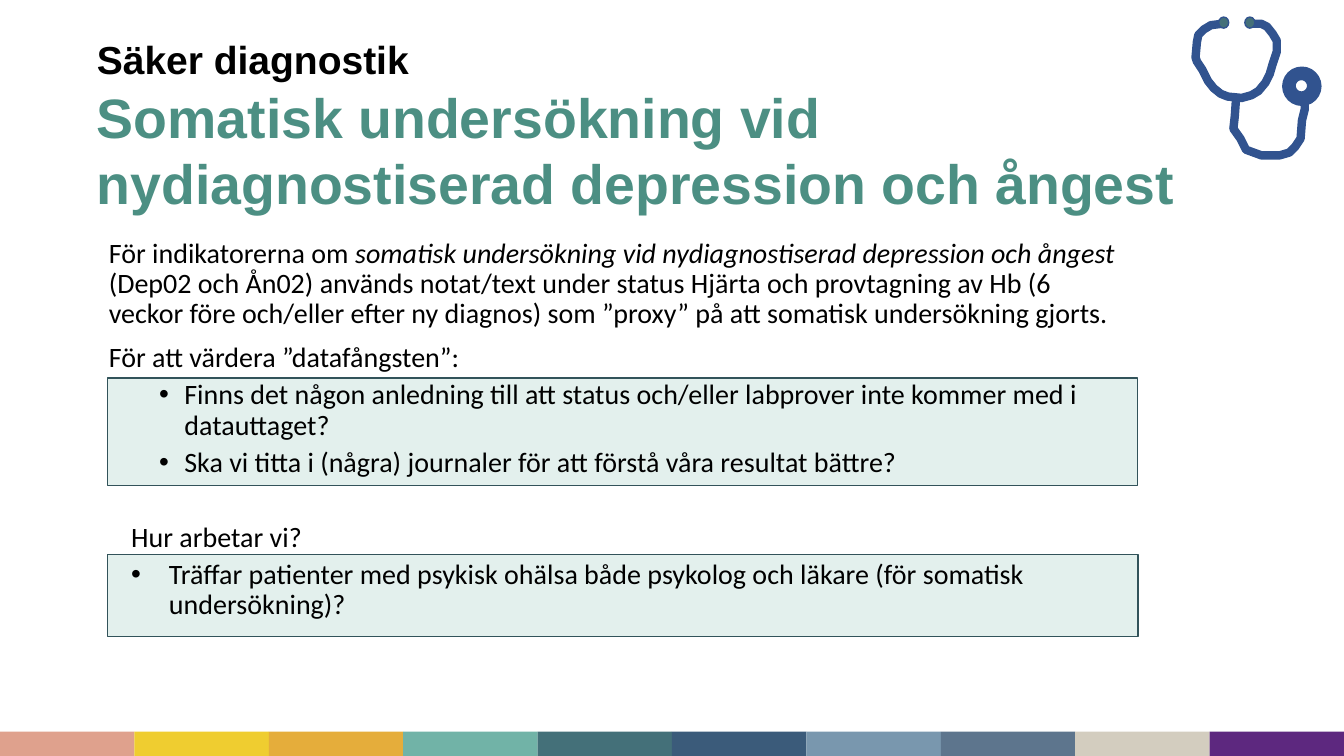
import pptx
import pptx.util
import pptx.dml.color
import pptx.enum.shapes
import pptx.enum.text
import pptx.oxml.ns
from dataclasses import dataclass
from lxml import etree

Pt = pptx.util.Pt
SHAPES = pptx.enum.shapes.MSO_SHAPE

HEADING = [
    ("Säker diagnostik ", "kicker_size", "ink"),
    ("Somatisk undersökning vid nydiagnostiserad depression och ångest", "title_size", "accent"),
]
BODY = [
    dict(spans=[
        ("För indikatorerna om ", False),
        ("somatisk undersökning vid nydiagnostiserad depression och ångest ", True),
        ("(Dep02 och Ån02) används notat/text under status Hjärta och provtagning av Hb "
         "(6 veckor före och/eller efter ny diagnos) som ”proxy” på att somatisk undersökning gjorts.", False),
    ]),
    dict(spans=[("För att värdera ”datafångsten”:", False)], before=10),
    dict(spans=[("Finns det någon anledning till att status och/eller labprover "
                 "inte kommer med i datauttaget?", False)],
         before=5, level=1, margin=54, hanging=18),
    dict(spans=[("Ska vi titta i (några) journaler för att förstå våra resultat bättre?", False)],
         before=5, level=1, margin=54, hanging=18),
    dict(spans=[("Hur arbetar vi?", False)], before=32, margin=16),
    dict(spans=[("Träffar patienter med psykisk ohälsa både psykolog och läkare "
                 "(för somatisk undersökning)?", False)],
         before=5, margin=43, hanging=27),
]
STRIPE_COLOURS = ["DFA18D", "EFCD30", "E5AD3B", "71B3A7", "447079",
                  "3B5B7A", "7997AE", "5D758D", "D3CDBF", "5D287F"]
PANELS = [(77, 396, 736, 58.5), (77, 270, 735.5, 77)]
EARTUBES = [
    (895, 16.6), (901.4, 16.6), (905, 18.7), (909.4, 23.8), (911.5, 28.8), (911.5, 37.4),
    (909.4, 46.1), (907.2, 52.6), (903.6, 59), (898.6, 64.8), (894.2, 67.7), (887, 69.8),
    (877, 69.1), (871.9, 67), (866.9, 63.4), (862.6, 57.6), (859, 49.7), (855.4, 43.9),
    (853.9, 41), (854.6, 30.2), (856.1, 25.2), (859.7, 20.9), (865.4, 18), (872.6, 16.6),
]
HOSE = [
    (882.7, 69.1), (882, 82.8), (881.3, 92.2), (885.6, 99.4), (889.9, 106.6), (900.7, 110.9),
    (913.7, 110.9), (920.9, 108.7), (925.2, 105.1), (928.8, 99.4), (930.2, 86.4),
    (932.4, 77.8), (931.7, 73.4),
]
EARTIPS = [(870.5, 12.2, 7.2, 7.9), (889.2, 12.2, 7.2, 7.9)]
CHESTPIECE = [((917.3, 49, 25.2, 25.2), 3), ((921.6, 53.3, 16, 16), 8)]


@dataclass(frozen=True)
class Theme:
    heading_font: str = "Arial"
    body_font: str = "Calibri"
    kicker_size: float = 27.9
    title_size: float = 39.6
    body_size: float = 20
    ink: str = "000000"
    accent: str = "4C8F83"
    panel: str = "E3F0ED"
    panel_line: str = "32535A"
    tube: str = "31538F"
    eartip: str = "447079"


THEME = Theme()


def colour(code):
    return pptx.dml.color.RGBColor.from_string(code)


def write(para, text, *, font, size, ink, bold=False, italic=False):
    span = para.add_run()
    span.text = text
    span.font.name = font
    span.font.size = Pt(size)
    span.font.color.rgb = colour(ink)
    span.font.bold = bold
    span.font.italic = italic


def paint(shape, fill=None, line=None, weight=1):
    shape.shadow.inherit = False
    if fill:
        shape.fill.solid()
        shape.fill.fore_color.rgb = colour(fill)
    else:
        shape.fill.background()
    if line:
        shape.line.color.rgb = colour(line)
        shape.line.width = Pt(weight)
    else:
        shape.line.fill.background()


def add_block(page, kind, frame, **style):
    paint(page.shapes.add_shape(kind, *map(Pt, frame)), **style)


def add_tube(page, points):
    builder = page.shapes.build_freeform(*points[0], scale=Pt(1))
    builder.add_line_segments(points[1:], close=False)
    paint(builder.convert_to_shape(), line=THEME.tube, weight=6)


def place(holder, frame, anchor):
    holder.left, holder.top, holder.width, holder.height = map(Pt, frame)
    text = holder.text_frame
    text.word_wrap = True
    text.auto_size = pptx.enum.text.MSO_AUTO_SIZE.NONE
    text.vertical_anchor = anchor
    holder.element.getparent().append(holder.element)
    return text


def indent(para, margin, hanging):
    properties = para._p.get_or_add_pPr()
    properties.set("marL", str(Pt(margin)))
    properties.set("indent", str(-Pt(hanging)))
    name = pptx.oxml.ns.qn
    if hanging:
        tint = etree.SubElement(properties, name("a:buClr"))
        etree.SubElement(tint, name("a:srgbClr"), val=THEME.ink)
        etree.SubElement(properties, name("a:buFont"), typeface=THEME.heading_font)
        etree.SubElement(properties, name("a:buChar"), char="•")
    else:
        etree.SubElement(properties, name("a:buNone"))


def fill_title(holder):
    text = place(holder, (62, 37.5, 828, 104.5), pptx.enum.text.MSO_ANCHOR.MIDDLE)
    para = text.paragraphs[0]
    para.alignment = pptx.enum.text.PP_ALIGN.LEFT
    for number, (words, size, ink) in enumerate(HEADING):
        if number:
            para.add_line_break()
        write(para, words, font=THEME.heading_font, size=getattr(THEME, size),
              ink=getattr(THEME, ink), bold=True)


def fill_body(holder):
    text = place(holder, (70.5, 167, 736, 291), pptx.enum.text.MSO_ANCHOR.TOP)
    for number, item in enumerate(BODY):
        para = text.add_paragraph() if number else text.paragraphs[0]
        para.level = item.get("level", 0)
        para.line_spacing = 0.9
        para.space_before = Pt(item.get("before", 0))
        indent(para, item.get("margin", 0), item.get("hanging", 0))
        for words, italic in item["spans"]:
            write(para, words, font=THEME.body_font, size=THEME.body_size,
                  ink=THEME.ink, italic=italic)


def main():
    deck = pptx.Presentation()
    deck.slide_width, deck.slide_height = Pt(960), Pt(540)
    page = deck.slides.add_slide(deck.slide_layouts[1])

    stripe = 960 / len(STRIPE_COLOURS)
    for column, code in enumerate(STRIPE_COLOURS):
        add_block(page, SHAPES.RECTANGLE, (column * stripe, 522.5, stripe, 17.5), fill=code)
    for frame in PANELS:
        add_block(page, SHAPES.RECTANGLE, frame, fill=THEME.panel, line=THEME.panel_line)

    fill_body(page.placeholders[1])
    fill_title(page.shapes.title)

    for points in (EARTUBES, HOSE):
        add_tube(page, points)
    for frame in EARTIPS:
        add_block(page, SHAPES.OVAL, frame, fill=THEME.eartip, line=THEME.tube)
    for frame, weight in CHESTPIECE:
        add_block(page, SHAPES.OVAL, frame, line=THEME.tube, weight=weight)

    deck.save("out.pptx")


if __name__ == "__main__":
    main()
